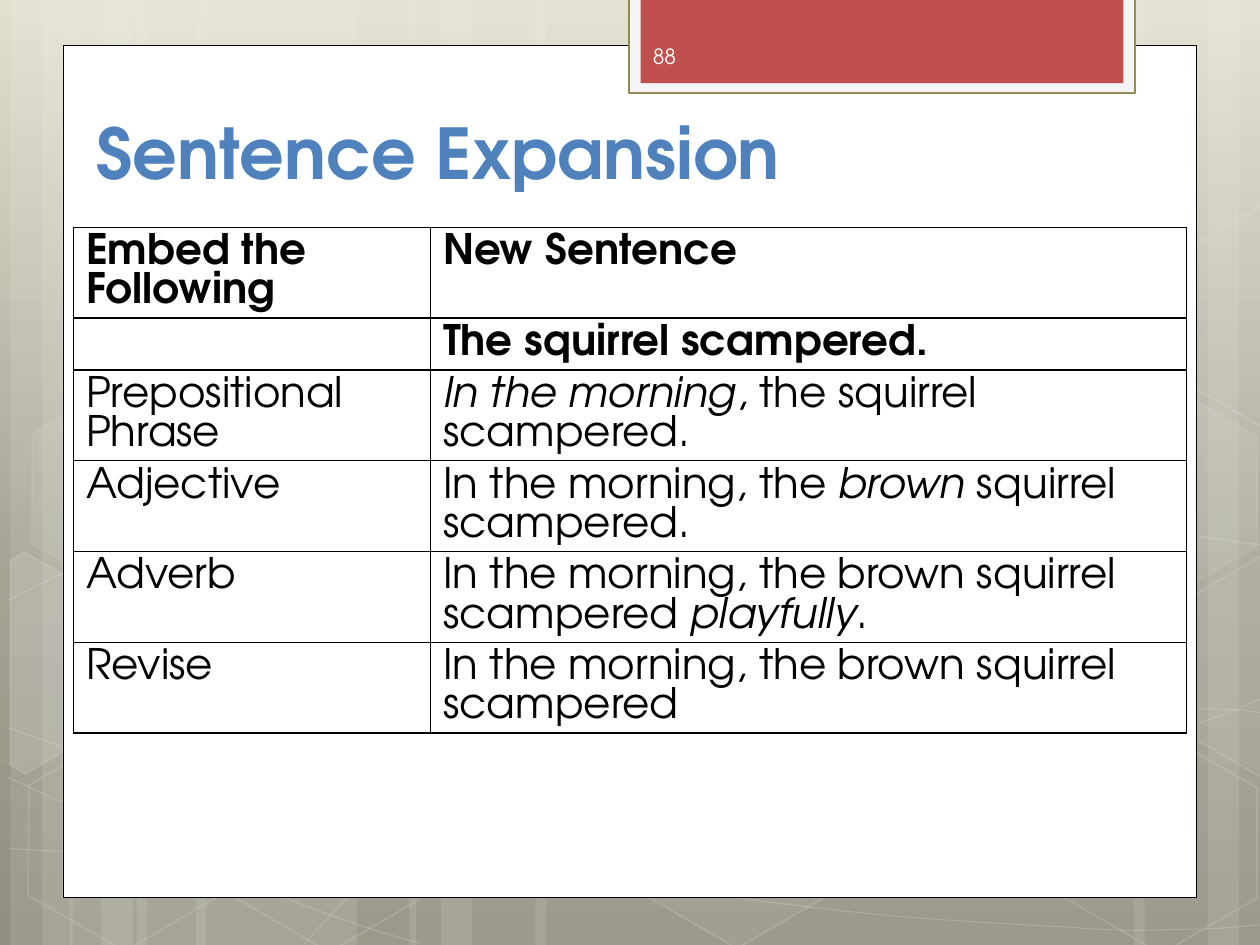
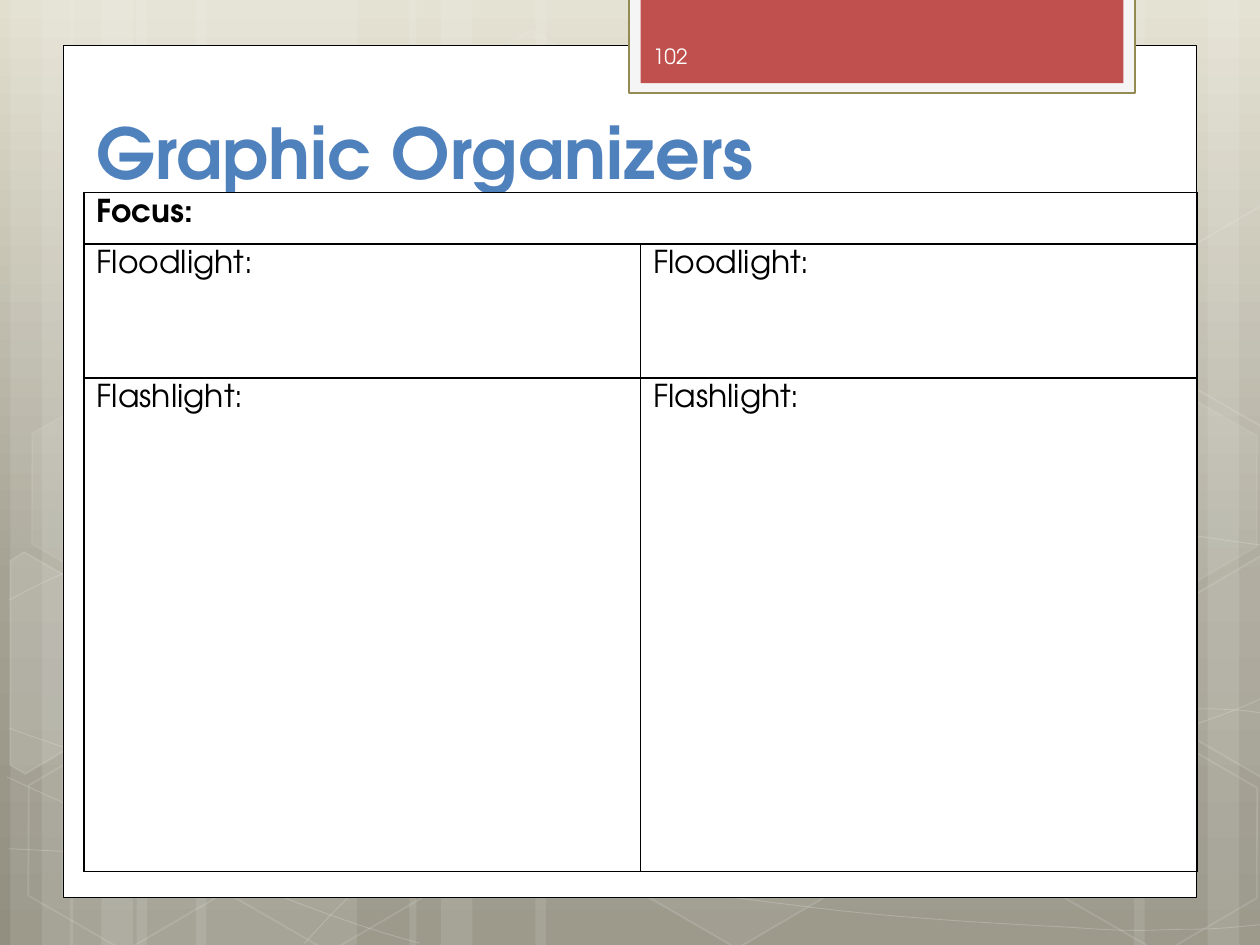
from copy import deepcopy
from math import cos, radians, sin
from pptx import Presentation
from pptx.dml.color import RGBColor
from pptx.enum.shapes import MSO_SHAPE as Kind
from pptx.enum.text import MSO_ANCHOR as Anchor, MSO_AUTO_SIZE as Auto, PP_ALIGN as Align
from pptx.oxml.ns import qn
from pptx.oxml.xmlchemy import OxmlElement as Node
from pptx.util import Pt

FONT = "TeX Gyre Adventor"
WHITE, BLACK, BLUE, RED = "FFFFFF", "000000", "4F81BD", "C0504D"
PALE, OLIVE, CREAM = "F5F5F5", "948A54", "FEFEFE"
WASH = [(0, "E2DFCF"), (0.62, "A5A293"), (1, "928F80")]
TILT = 30

DECKS = [
    {
        "title": "Sentence Expansion", "page": "88", "at": (42, 130), "size": 24, "bold": 2,
        "cols": [204, 432], "rows": [51.8, 29.5, 51.8, 51.8, 51.8, 51.8],
        "cells": [
            ("Embed the Following", "New Sentence"),
            ("", "The squirrel scampered."),
            ("Prepositional Phrase", "*In the morning*, the squirrel scampered."),
            ("Adjective", "In the morning, the *brown* squirrel scampered."),
            ("Adverb", "In the morning, the brown squirrel scampered *playfully*."),
            ("Revise", "In the morning, the brown squirrel scampered"),
        ],
    },
    {
        "title": "Graphic Organizers", "page": "102", "at": (48, 110), "size": 18, "bold": 1,
        "cols": [318, 318], "rows": [29.3, 76.7, 282],
        "cells": [
            ("Focus:",),
            ("Floodlight:", "Floodlight:"),
            ("Flashlight:", "Flashlight:"),
        ],
    },
]

STRIPES = [(78, 126, 0), (6, 36, 0), (24, 60, 0), (112, 126, 0), (40, 36, 0), (58, 60, 0),
           (528, 126, 180), (690, 36, 180), (648, 60, 180),
           (306, 222, 0), (234, 36, 0), (252, 60, 0)]
CURVES = [
    [(5, 485), (44, 487), (83, 489), (137, 488), (191, 487), (258, 486), (330, 479),
     (402, 472), (504, 458), (570, 444), (636, 431), (703, 409), (725, 397)],
    [(5, 343), (26, 332), (47, 321), (87, 310), (128, 300), (186, 284), (250, 279),
     (314, 274), (392, 273), (471, 279), (550, 284), (682, 307), (725, 312)],
    [(4, 444), (91, 484), (178, 523), (240, 539)],
    [(5, 416), (27, 424), (50, 432), (92, 444), (134, 454), (197, 472), (257, 485),
     (317, 497), (392, 510), (452, 517), (512, 525), (576, 528), (614, 530),
     (652, 533), (662, 531), (680, 531), (699, 531), (712, 529), (725, 528)],
    [(174, 539), (187, 525), (200, 510), (217, 498), (235, 485), (259, 470), (279, 460),
     (300, 450), (312, 446), (338, 438), (364, 431), (413, 421), (438, 416),
     (464, 411), (467, 411), (490, 410), (512, 408), (547, 405), (572, 405),
     (597, 404), (638, 405), (638, 405), (654, 405), (670, 405), (686, 405),
     (699, 405), (712, 406), (718, 407), (724, 408), (722, 407), (724, 408)],
]
HEXES = [(240.5, 26, 4, 8), (358, 424, 6, 12), (8, 425.5, 0, 12), (10, 224.5, 7, 8),
         (125, 426, 0, 12), (542, 326, 10, 12), (600.5, 427, 0, 12), (600.5, 226, 7, 8)]
SHARDS = [
    (10, (25.9, 385.2), [(5.8, 320.4), (13.7, 315.4), (69.1, 347), (68.4, 410.4),
                         (14.4, 442.1), (5.8, 437)]),
    (4, (709.2, 374.4), [(666.7, 349.2), (720.7, 317.5), (726.5, 321.1), (726.5, 441.4),
                         (721.4, 444.2), (666.7, 412.6)]),
    (0, (709.2, 173.5), [(666.7, 149), (720.7, 117.4), (727.2, 121), (726.5, 241.2),
                         (721.4, 244.1), (666.7, 212.4)]),
]
PANELS = [((36, 26, 648, 487), WHITE, BLACK, 0.5),
          ((359.2, -1.5, 289.5, 54.5), PALE, OLIVE, 1.25),
          ((366, -1.5, 276, 49), RED, None, 0)]


def rgb(code):
    return RGBColor.from_string(code)


def box(*nums):
    return [Pt(num) for num in nums]


def fade(fill, code, alpha):
    """Fill with a solid colour at a percentage of opacity."""
    fill.solid()
    fill.fore_color.rgb = rgb(code)
    if alpha < 100:
        node = Node("a:alpha")
        node.set("val", str(alpha * 1000))
        fill.fore_color._xFill.find(qn("a:srgbClr")).append(node)


def paint(shape, fill=WHITE, line=WHITE, width=0, glow=100, edge=100):
    """Style a shape; zero opacity or width leaves that part out."""
    shape.shadow.inherit = False
    for part, code, alpha in ((shape.fill, fill, glow),
                              (shape.line.fill, line, edge if width else 0)):
        if alpha:
            fade(part, code, alpha)
        else:
            part.background()
    if width:
        shape.line.width = Pt(width)


def trace(shapes, knots, close):
    """Build an outline of straight segments."""
    dots = [box(*knot) for knot in knots]
    pen = shapes.build_freeform(*dots[0], scale=1.0)
    pen.add_line_segments(dots[1:], close=close)
    return pen.convert_to_shape()


def bend(shape):
    """Turn each three segments of an outline into one cubic curve."""
    track = shape.element.find(".//" + qn("a:path"))
    lines = track.findall(qn("a:lnTo"))
    for i in range(0, len(lines), 3):
        curve = Node("a:cubicBezTo")
        for line in lines[i:i + 3]:
            curve.append(line[0])
            track.remove(line)
        track.append(curve)


def turn(knots, mid):
    """Turn points back by the tilt around a centre."""
    c, s = cos(radians(TILT)), sin(radians(TILT))
    gaps = [(x - mid[0], y - mid[1]) for x, y in knots]
    return [(mid[0] + x * c + y * s, mid[1] + y * c - x * s) for x, y in gaps]


def dress(layout, slide):
    """Draw the shared backdrop and move it to the layout."""
    fill = layout.background.fill
    fill.gradient()
    fill.gradient_angle = 270
    stops = layout.element.find(".//" + qn("a:gsLst"))
    stops.append(deepcopy(stops[0]))
    for stop, (place, code) in zip(fill.gradient_stops, WASH):
        stop.position = place
        stop.color.rgb = rgb(code)

    shapes, made = slide.shapes, []
    for left, width, spin in STRIPES:
        made.append(shapes.add_shape(Kind.RECTANGLE, *box(left, 0, width, 540)))
        made[-1].rotation = spin
        paint(made[-1], glow=10)
    for knots in CURVES:
        made.append(trace(shapes, knots, False))
        bend(made[-1])
        paint(made[-1], width=0.5, glow=0, edge=20)
    for left, top, glow, edge in HEXES:
        made.append(shapes.add_shape(Kind.HEXAGON, *box(left, top, 126, 109.5)))
        made[-1].adjustments[0] = 0.285
        made[-1].rotation = TILT
        paint(made[-1], width=1, glow=glow, edge=edge)
    for glow, mid, knots in SHARDS:
        made.append(trace(shapes, turn(knots, mid), True))
        made[-1].rotation = TILT
        paint(made[-1], width=1, glow=glow, edge=12)
    for place, code, line, width in PANELS:
        made.append(shapes.add_shape(Kind.RECTANGLE, *box(*place)))
        paint(made[-1], code, line, width)
    for num, shape in enumerate(made, 100):
        shape.element.find(".//" + qn("p:cNvPr")).set("id", str(num))
        layout.shapes.element.append(shape.element)


def style(font, size, code, bold=False, slant=False):
    font.name, font.size, font.bold, font.italic = FONT, Pt(size), bold, slant
    font.color.rgb = rgb(code)


def label(shape, text, place, anchor, size, code, bold=False):
    """Place one left-aligned line of text."""
    shape.left, shape.top, shape.width, shape.height = box(*place)
    frame = shape.text_frame
    frame.text = text
    frame.word_wrap, frame.auto_size = True, Auto.NONE
    frame.vertical_anchor = anchor
    para = frame.paragraphs[0]
    para.alignment = Align.LEFT
    style(para.runs[0].font, size, code, bold)


def rule(cell):
    """Give a cell a white fill and thin black borders."""
    fade(cell.fill, WHITE, 100)
    props = cell._tc.get_or_add_tcPr()
    for n, side in enumerate("LRTB"):
        line, fill, tint = Node("a:ln" + side), Node("a:solidFill"), Node("a:srgbClr")
        line.set("w", str(Pt(1)))
        tint.set("val", BLACK)
        fill.append(tint)
        line.append(fill)
        props.insert(n, line)


def grid(slide, deck):
    """Add the table; text between asterisks is italic."""
    cols, rows = deck["cols"], deck["rows"]
    place = box(*deck["at"], sum(cols), sum(rows))
    table = slide.shapes.add_table(len(rows), len(cols), *place).table
    table.first_row = table.horz_banding = False
    for col, width in zip(table.columns, cols):
        col.width = Pt(width)
    for r, (texts, high) in enumerate(zip(deck["cells"], rows)):
        table.rows[r].height = Pt(high)
        for c in range(len(cols)):
            rule(table.cell(r, c))
        if len(texts) < len(cols):
            table.cell(r, 0).merge(table.cell(r, len(cols) - 1))
        for c, text in enumerate(texts):
            para = table.cell(r, c).text_frame.paragraphs[0]
            style(para.font, deck["size"], BLACK)
            for n, part in enumerate(text.split("*")):
                if part:
                    run = para.add_run()
                    run.text = part
                    style(run.font, deck["size"], BLACK, r < deck["bold"], n % 2 == 1)


def main():
    prs = Presentation()
    prs.slide_width, prs.slide_height = box(720, 540)
    layout = prs.slide_layouts[5]
    for n, deck in enumerate(DECKS):
        slide = prs.slides.add_slide(layout)
        if n == 0:
            dress(layout, slide)
        label(slide.shapes.title, deck["title"], (48, 24, 588, 90), Anchor.BOTTOM, 40, BLUE, True)
        spot = (366, 17.7, 105, 29)
        note = slide.shapes.add_textbox(*box(*spot))
        label(note, deck["page"], spot, Anchor.MIDDLE, 12, CREAM)
        grid(slide, deck)
    prs.save("out.pptx")


if __name__ == "__main__":
    main()
